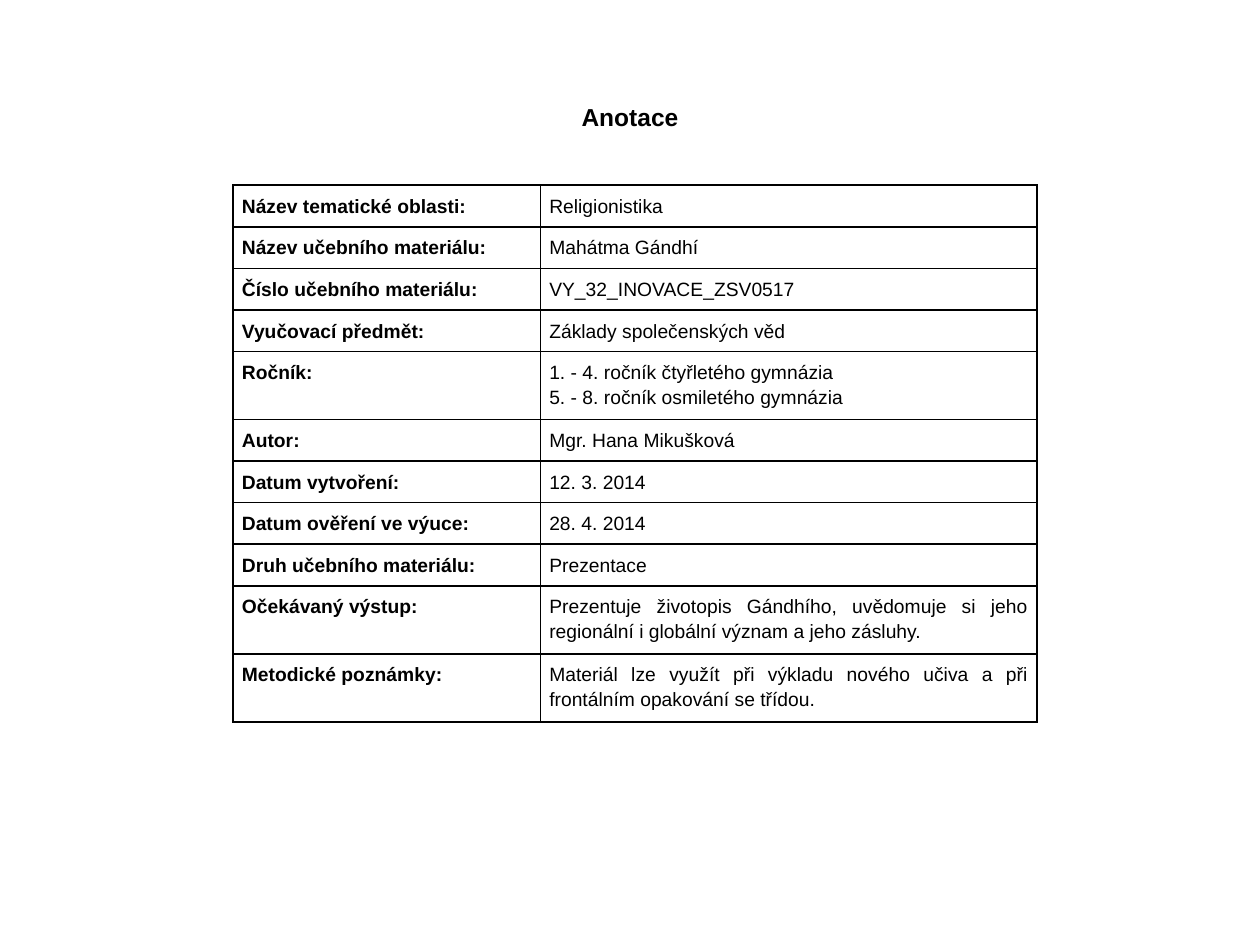
from lxml import etree
from pptx import Presentation
from pptx.dml.color import RGBColor
from pptx.enum.text import MSO_ANCHOR, PP_ALIGN
from pptx.oxml.ns import qn
from pptx.util import Inches, Pt

BLACK = "000000"
ROWS = [
    ("Název tematické oblasti:", "Religionistika"),
    ("Název učebního materiálu:", "Mahátma Gándhí"),
    ("Číslo učebního materiálu:", "VY_32_INOVACE_ZSV0517"),
    ("Vyučovací předmět:", "Základy společenských věd"),
    ("Ročník:", "1. - 4. ročník čtyřletého gymnázia\n5. - 8. ročník osmiletého gymnázia"),
    ("Autor:", "Mgr. Hana Mikušková"),
    ("Datum vytvoření:", "12. 3. 2014"),
    ("Datum ověření ve výuce:", "28. 4. 2014"),
    ("Druh učebního materiálu:", "Prezentace"),
    ("Očekávaný výstup:", "Prezentuje životopis Gándhího, uvědomuje si jeho "
                          "regionální i globální význam a jeho zásluhy."),
    ("Metodické poznámky:", "Materiál lze využít při výkladu nového učiva a při "
                            "frontálním opakování se třídou."),
]
TWO_LINE_ROWS = {"Ročník:", "Očekávaný výstup:", "Metodické poznámky:"}


def format_text(p, size, bold, color):
    for r in p.runs:
        r.font.name = "Arial"
        r.font.size = Pt(size)
        r.font.bold = bold
        r.font.color.rgb = RGBColor.from_string(color)


def add_borders(cell, color):
    tcPr = cell._tc.get_or_add_tcPr()
    for side in ("a:lnL", "a:lnR", "a:lnT", "a:lnB"):
        ln = etree.SubElement(tcPr, qn(side), w=str(Pt(1)))
        fill = etree.SubElement(ln, qn("a:solidFill"))
        etree.SubElement(fill, qn("a:srgbClr"), val=color)


prs = Presentation()
prs.slide_width, prs.slide_height = Inches(10), Inches(7.5)
s = prs.slides.add_slide(prs.slide_layouts[5])

# Title
title = s.shapes.title
title.left, title.top = Inches(0), Inches(0.68)
title.width, title.height = Inches(10), Inches(0.5)
tf = title.text_frame
tf.text = "Anotace"
tf.vertical_anchor = MSO_ANCHOR.MIDDLE
tf.paragraphs[0].alignment = PP_ALIGN.CENTER
format_text(tf.paragraphs[0], 14, True, BLACK)

# Table of labels and values
table = s.shapes.add_table(len(ROWS), 2, Inches(1.85), Inches(1.47),
                           Inches(6.38), Inches(4.25)).table
table.first_row = table.horz_banding = False
table.columns[0].width, table.columns[1].width = Inches(2.44), Inches(3.94)

for i, row in enumerate(ROWS):
    table.rows[i].height = Inches(0.54 if row[0] in TWO_LINE_ROWS else 0.33)
    for j, text in enumerate(row):
        cell = table.cell(i, j)
        cell.margin_left = cell.margin_right = Inches(0.07)
        cell.margin_top = cell.margin_bottom = Inches(0.06)
        cell.text_frame.text = text
        for p in cell.text_frame.paragraphs:
            p.alignment = PP_ALIGN.JUSTIFY if j == 1 or i >= 8 else PP_ALIGN.LEFT
            p.line_spacing = 1.15
            format_text(p, 11, j == 0, BLACK)
        add_borders(cell, BLACK)
        cell.fill.background()

prs.save("out.pptx")
